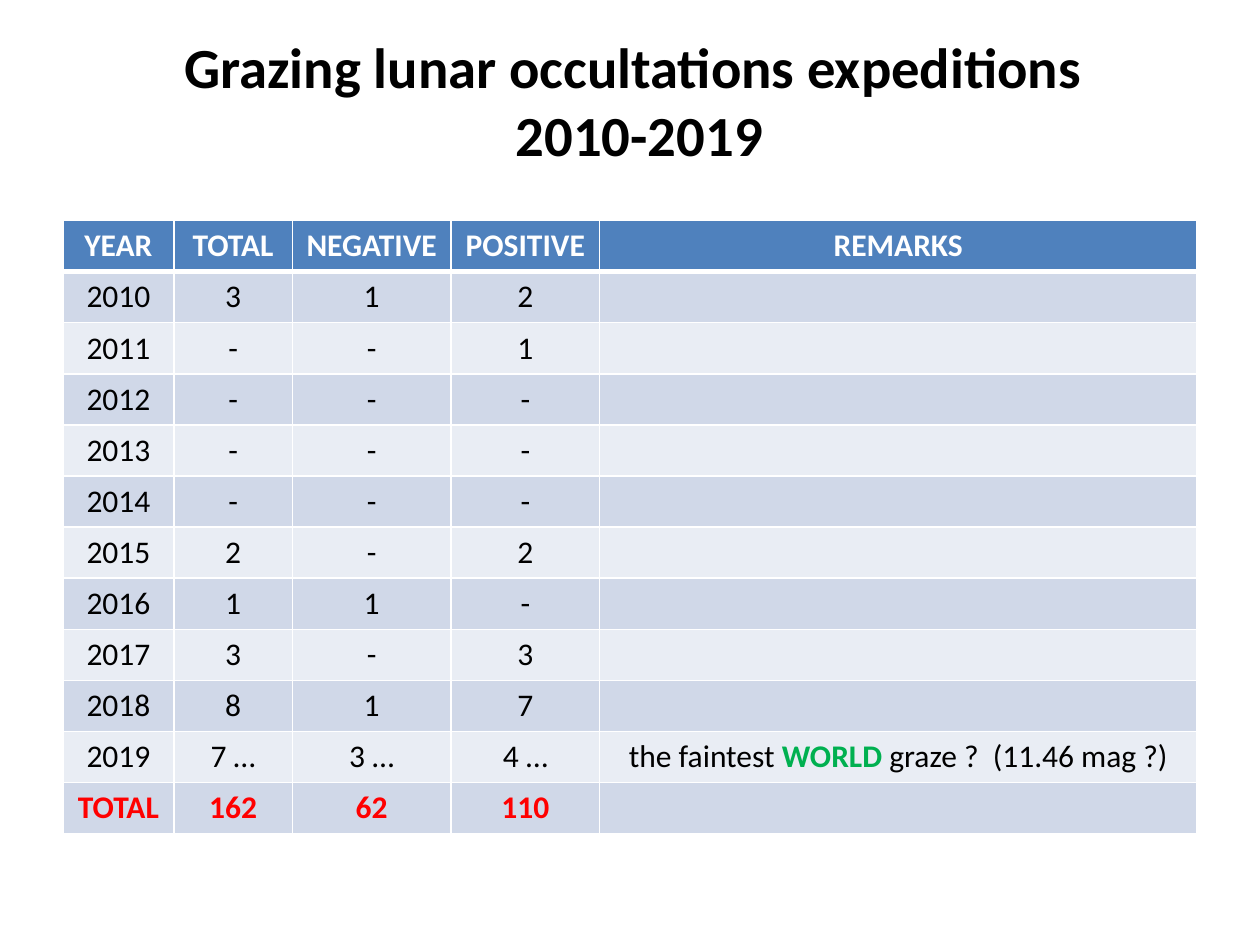
"""Build the slide on grazing lunar occultation expeditions, 2010-2019."""
from lxml.etree import SubElement
from pptx import Presentation
from pptx.dml.color import RGBColor
from pptx.enum.text import MSO_ANCHOR, PP_ALIGN
from pptx.oxml.ns import qn
from pptx.util import Pt

BLACK = RGBColor(0x00, 0x00, 0x00)
WHITE = RGBColor(0xFF, 0xFF, 0xFF)
RED = RGBColor(0xFF, 0x00, 0x00)
GREEN = RGBColor(0x00, 0xB0, 0x50)
BLUE = RGBColor(0x4F, 0x81, 0xBD)
BANDS = [RGBColor(0xE9, 0xED, 0xF4), RGBColor(0xD0, 0xD8, 0xE8)]

TITLE = {"size": Pt(32.4), "bold": True, "color": BLACK}
HEAD = {"size": Pt(18), "bold": True, "color": WHITE}
BODY = {"size": Pt(18), "bold": False, "color": BLACK}
TOTAL = {"size": Pt(18), "bold": True, "color": RED}
WORLD = {"size": Pt(18), "bold": True, "color": GREEN}

COLS = [63.36, 67.68, 90.72, 84.96, 341.28]
ROW_H = 29.2
REMARK = [("the faintest ", BODY), ("WORLD ", WORLD), ("graze ?  (11.46 mag ?)", BODY)]
ROWS = [
    ["YEAR", "TOTAL", "NEGATIVE", "POSITIVE", "REMARKS"],
    ["2010", "3", "1", "2", ""],
    ["2011", "-", "-", "1", ""],
    ["2012", "-", "-", "-", ""],
    ["2013", "-", "-", "-", ""],
    ["2014", "-", "-", "-", ""],
    ["2015", "2", "-", "2", ""],
    ["2016", "1", "1", "-", ""],
    ["2017", "3", "-", "3", ""],
    ["2018", "8", "1", "7", ""],
    ["2019", "7 …", "3 …", "4 …", REMARK],
    ["TOTAL", "162", "62", "110", ""],
]
LAST = len(ROWS) - 1


def write(tf, runs):
    p = tf.paragraphs[0]
    p.alignment = PP_ALIGN.CENTER
    for text, fmt in runs:
        r = p.add_run()
        r.text = text
        r.font.name = "Calibri"
        for key, value in fmt.items():
            if key == "color":
                r.font.color.rgb = value
            else:
                setattr(r.font, key, value)


def set_border(cell, side, width):
    ln = SubElement(cell._tc.get_or_add_tcPr(), qn(f"a:ln{side}"), w=str(Pt(width)))
    SubElement(SubElement(ln, qn("a:solidFill")), qn("a:srgbClr"), val=str(WHITE))


prs = Presentation()
prs.slide_width, prs.slide_height = Pt(720), Pt(540)
s = prs.slides.add_slide(prs.slide_layouts[6])

sp = s.shapes.add_textbox(Pt(31), Pt(26), Pt(661.5), Pt(62.5))
tf = sp.text_frame
for key, value in {"word_wrap": True, "vertical_anchor": MSO_ANCHOR.MIDDLE}.items():
    setattr(tf, key, value)
write(tf, [("Grazing lunar occultations expeditions", TITLE)])
tf.paragraphs[0].add_line_break()
write(tf, [(" 2010-2019", TITLE)])

table = s.shapes.add_table(
    len(ROWS), len(COLS), Pt(36), Pt(126), Pt(sum(COLS)), Pt(ROW_H * len(ROWS))
).table
for col, width in zip(table.columns, COLS):
    col.width = Pt(width)

for i, values in enumerate(ROWS):
    table.rows[i].height = Pt(ROW_H)
    fmt = {0: HEAD, LAST: TOTAL}.get(i, BODY)
    borders = {"L": 1, "R": 1, "T": 3 if i == 1 else 1, "B": 3 if i == 0 else 1}
    for cell, value in zip(table.rows[i].cells, values):
        for side, width in borders.items():
            set_border(cell, side, width)
        cell.fill.solid()
        cell.fill.fore_color.rgb = BANDS[i % 2] if i else BLUE
        if value:
            write(cell.text_frame, [(value, fmt)] if isinstance(value, str) else value)

prs.save("out.pptx")
